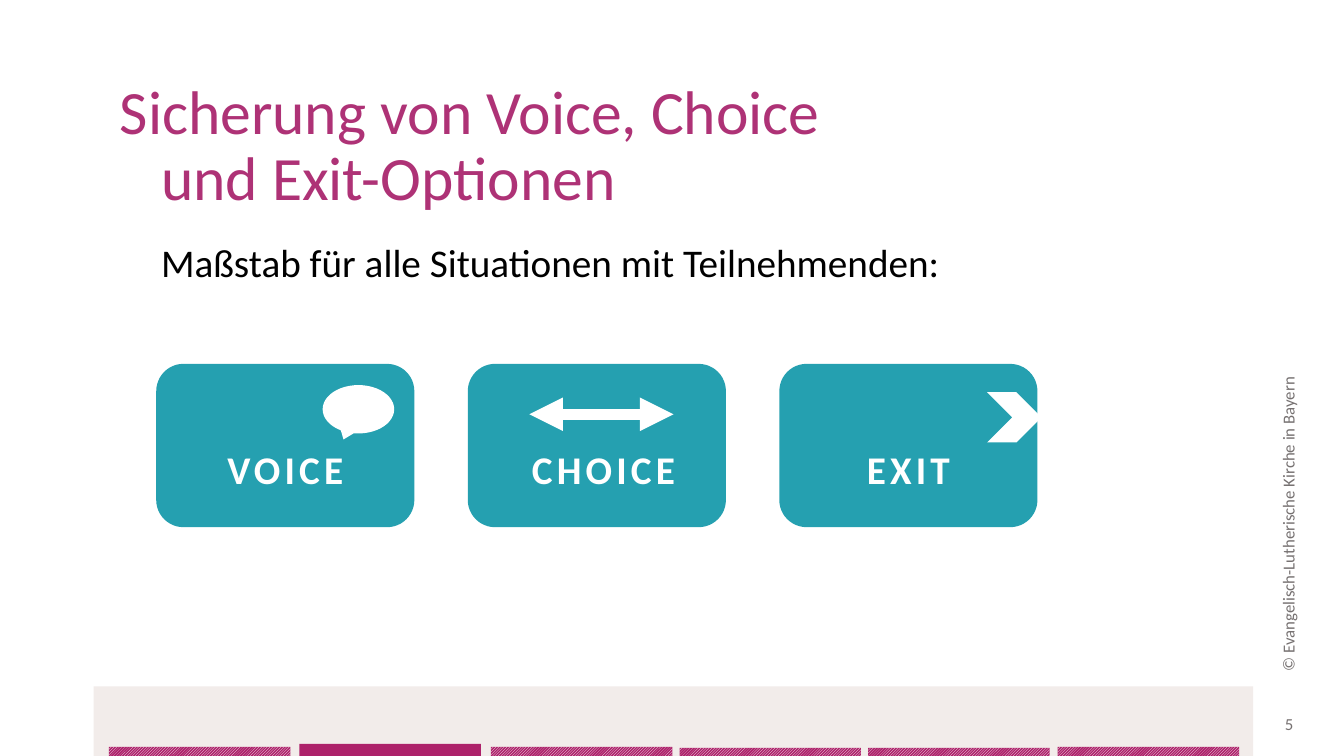
from lxml.etree import SubElement
from pptx import Presentation
from pptx.dml.color import RGBColor
from pptx.enum.dml import MSO_PATTERN
from pptx.enum.shapes import MSO_CONNECTOR, MSO_SHAPE as Shape
from pptx.enum.text import MSO_ANCHOR as Anchor, PP_ALIGN as Align
from pptx.oxml.ns import qn
from pptx.util import Emu, Pt

WHITE = RGBColor(0xFF, 0xFF, 0xFF)
BLACK = RGBColor(0x00, 0x00, 0x00)
GREY = RGBColor(0x76, 0x71, 0x71)
SAND = RGBColor(0xF2, 0xEC, 0xEA)
MAGENTA = RGBColor(0xAD, 0x21, 0x6A)
TITLE_PINK = RGBColor(0xAE, 0x32, 0x76)
TEAL = RGBColor(0x25, 0xA0, 0xB0)


def px(length):
    return Emu(length * 9144)


def write(frame, text, size=12, color=GREY, bold=False, align=Align.LEFT,
          anchor=Anchor.MIDDLE, spacing=None, tracking=0, hanging=0,
          pad_left=10, pad_top=5):
    frame.word_wrap = True
    frame.vertical_anchor = anchor
    frame.margin_left, frame.margin_top = px(pad_left), px(pad_top)
    frame.margin_right, frame.margin_bottom = px(10), px(5)
    paragraph = frame.paragraphs[0]
    paragraph.text = text
    paragraph.alignment = align
    paragraph.line_spacing = spacing
    if hanging:
        properties = paragraph._p.get_or_add_pPr()
        properties.set("marL", str(px(hanging)))
        properties.set("indent", str(px(-hanging)))
    for run in paragraph.runs:
        run.font.name = "Calibri"
        run.font.size = Pt(size)
        run.font.bold = bold
        run.font.color.rgb = color
        if tracking:
            run._r.get_or_add_rPr().set("spc", str(tracking * 100))


class SlideBuilder:
    def __init__(self, slide):
        self.shapes = slide.shapes

    def block(self, left, top, width, height, color, kind=Shape.RECTANGLE, hatched=False):
        block = self.shapes.add_shape(kind, px(left), px(top), px(width), px(height))
        block.shadow.inherit = False
        block.line.fill.background()
        if hatched:
            block.fill.patterned()
            block.fill.pattern = MSO_PATTERN.LIGHT_UPWARD_DIAGONAL
            block.fill.fore_color.rgb = WHITE
            block.fill.back_color.rgb = color
        else:
            block.fill.solid()
            block.fill.fore_color.rgb = color
        return block

    def text(self, left, top, width, height, text, rotation=0, **style):
        box = self.shapes.add_textbox(px(left), px(top), px(width), px(height))
        box.rotation = rotation
        write(box.text_frame, text, **style)

    def card(self, left, label, nudge=0):
        card = self.block(left, 361, 256, 162, TEAL, Shape.ROUNDED_RECTANGLE)
        write(card.text_frame, label, size=28, color=WHITE, bold=True,
              align=Align.CENTER, tracking=3, pad_left=10 + nudge, pad_top=52)

    def double_arrow(self, start, end, y, color, weight):
        arrow = self.shapes.add_connector(
            MSO_CONNECTOR.STRAIGHT, px(start), px(y), px(end), px(y))
        arrow.line.color.rgb = color
        arrow.line.width = Pt(weight)
        line = arrow.line._get_or_add_ln()
        for end_name in ("a:headEnd", "a:tailEnd"):
            SubElement(line, qn(end_name), type="triangle")
        SubElement(arrow._element.spPr, qn("a:effectLst"))


def main():
    deck = Presentation()
    deck.slide_width, deck.slide_height = px(1333), px(750)
    page = SlideBuilder(deck.slides.add_slide(deck.slide_layouts[6]))

    page.block(93, 681, 1150, 69, SAND)
    page.text(1244, 698, 69, 40, "5", align=Align.CENTER)
    page.text(1054, 437, 447, 31, "© Evangelisch-Lutherische Kirche in Bayern", rotation=270)

    current_section = 1
    section_tabs = [(108, 741), (297, 738), (487, 741), (674, 742), (861, 742), (1049, 741)]
    for section, (left, top) in enumerate(section_tabs):
        page.block(left, top, 180, 750 - top, MAGENTA, hatched=section != current_section)

    page.text(109, 74, 1139, 145, "Sicherung von Voice, Choice\vund Exit-Optionen",
              size=44, color=TITLE_PINK, spacing=0.9, hanging=41)
    page.text(150, 237, 1078, 63, "Maßstab für alle Situationen mit Teilnehmenden:",
              size=28, color=BLACK, spacing=0.9, anchor=Anchor.TOP)

    for column, (label, nudge) in enumerate([("VOICE", 0), ("CHOICE", 13), ("EXIT", 0)]):
        page.card(155 + column * 309, label, nudge)

    page.block(320, 382, 71, 48, WHITE, Shape.OVAL_CALLOUT)
    page.double_arrow(525, 668, 411, WHITE, 8)
    page.block(979, 389, 54, 50, WHITE, Shape.CHEVRON)

    deck.save("out.pptx")


if __name__ == "__main__":
    main()
